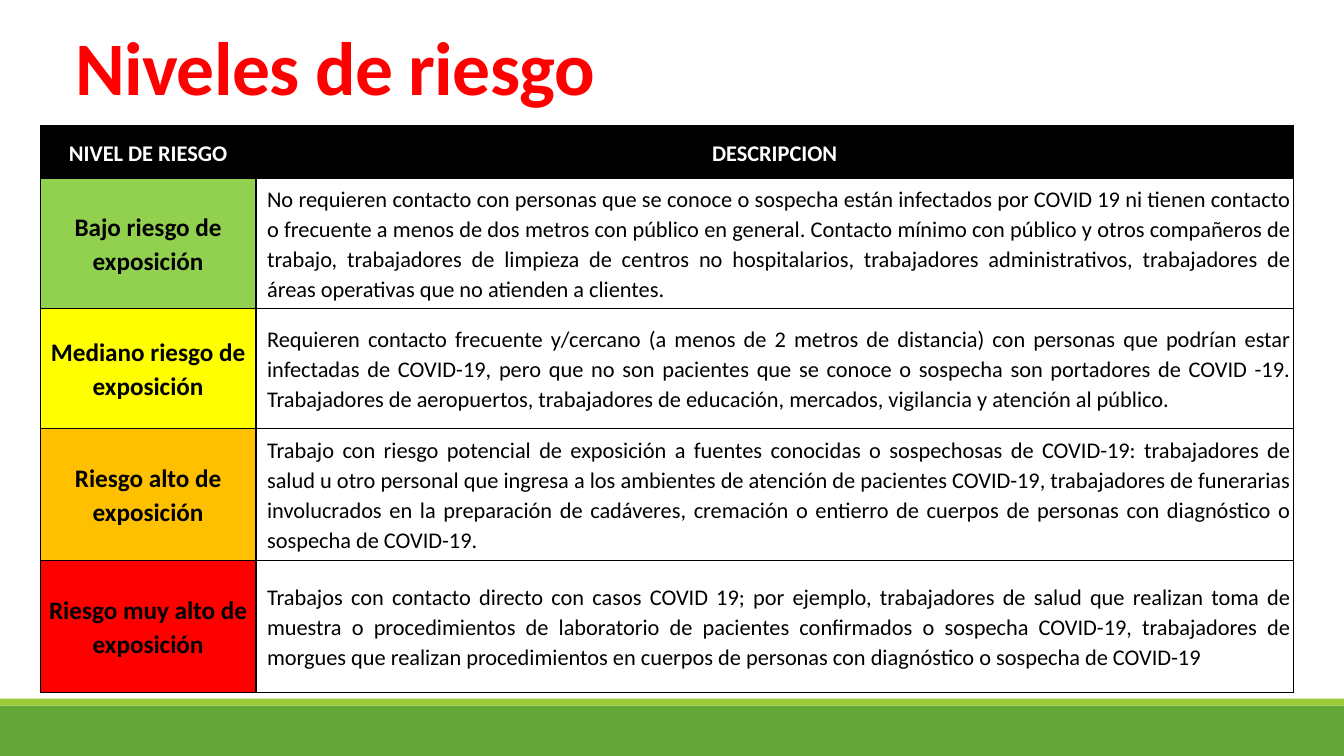
"""Build the slide that describes the levels of exposure risk."""
from dataclasses import dataclass
from typing import Any

import lxml.etree
import pptx
import pptx.dml.color
import pptx.enum.shapes
import pptx.enum.text
import pptx.oxml
import pptx.oxml.ns
import pptx.util

Pt = pptx.util.Pt
RGB = pptx.dml.color.RGBColor.from_string
ALIGN = pptx.enum.text.PP_ALIGN
ANCHOR = pptx.enum.text.MSO_ANCHOR


@dataclass(frozen=True)
class Theme:
    font: str = "Calibri"
    title: str = "FF0000"
    black: str = "000000"
    white: str = "FFFFFF"
    band: str = "63A537"
    stripe: str = "99CB38"
    title_size: float = 54
    level_size: float = 18
    body_size: float = 16


@dataclass(frozen=True)
class Band:
    top: float
    height: float
    color: str


@dataclass(frozen=True)
class Risk:
    level: str
    color: str
    height: float
    description: str


@dataclass(frozen=True)
class CellStyle:
    fill: str
    color: str
    size: float
    bold: bool = True
    align: Any = ALIGN.CENTER
    indent: float = 0


THEME = Theme()
WIDTH, HEIGHT = 960, 540
BANDS = [Band(504, 36, THEME.band), Band(499, 5, THEME.stripe)]
TABLE_LEFT, TABLE_TOP = 28.8, 90
COLUMNS = [154.08, 740.88]
HEADINGS = ["NIVEL DE RIESGO", "DESCRIPCION"]
HEADER_HEIGHT = 37.44
RISKS = [
    Risk("Bajo riesgo de exposición", "92D050", 92.88,
         "No requieren contacto con personas que se conoce o sospecha están infectados por "
         "COVID 19 ni tienen contacto o frecuente a menos de dos metros con público en general. "
         "Contacto mínimo con público y otros compañeros de trabajo, trabajadores de limpieza "
         "de centros no hospitalarios, trabajadores administrativos, trabajadores de áreas "
         "operativas que no atienden a clientes."),
    Risk("Mediano riesgo de exposición", "FFFF00", 85.68,
         "Requieren contacto frecuente y/cercano (a menos de 2 metros de distancia) con personas "
         "que podrían estar infectadas de COVID-19, pero que no son pacientes que se conoce o "
         "sospecha son portadores de COVID -19. Trabajadores de aeropuertos, trabajadores de "
         "educación, mercados, vigilancia y atención al público."),
    Risk("Riesgo alto de exposición", "FFC000", 94.32,
         "Trabajo con riesgo potencial de exposición a fuentes conocidas o sospechosas de "
         "COVID-19: trabajadores de salud u otro personal que ingresa a los ambientes de "
         "atención de pacientes COVID-19, trabajadores de funerarias involucrados en la "
         "preparación de cadáveres, cremación o entierro de cuerpos de personas con diagnóstico "
         "o sospecha de COVID-19."),
    Risk("Riesgo muy alto de exposición", "FF0000", 94.32,
         "Trabajos con contacto directo con casos COVID 19; por ejemplo, trabajadores de salud "
         "que realizan toma de muestra o procedimientos de laboratorio de pacientes confirmados "
         "o sospecha COVID-19, trabajadores de morgues que realizan procedimientos en cuerpos de "
         "personas con diagnóstico o sospecha de COVID-19"),
]


def apply(target: Any, values: dict[str, Any]) -> None:
    for name, value in values.items():
        setattr(target, name, value)


def write(p: Any, text: str, size: float, color: str, bold: bool) -> Any:
    r = p.add_run()
    r.text = text
    apply(r.font, {"name": THEME.font, "size": Pt(size), "bold": bold})
    r.font.color.rgb = RGB(color)
    return r


def add_band(slide: Any, band: Band) -> None:
    sp = slide.shapes.add_shape(pptx.enum.shapes.MSO_SHAPE.RECTANGLE,
                                Pt(0), Pt(band.top), Pt(WIDTH), Pt(band.height))
    sp.shadow.inherit = False
    sp.fill.solid()
    sp.fill.fore_color.rgb = RGB(band.color)
    sp.line.fill.background()


def format_title(sp: Any, text: str) -> None:
    apply(sp, {"left": Pt(46.8), "top": Pt(25.92), "width": Pt(709.92), "height": Pt(56.88)})
    tf = sp.text_frame
    apply(tf, {"word_wrap": True, "vertical_anchor": ANCHOR.BOTTOM,
               "auto_size": pptx.enum.text.MSO_AUTO_SIZE.NONE})
    p = tf.paragraphs[0]
    apply(p, {"alignment": ALIGN.LEFT, "line_spacing": 0.85})
    r = write(p, text, THEME.title_size, THEME.title, True)
    r.font._element.set("spc", "-50")


def add_borders(cell: Any) -> None:
    tc_pr = cell._tc.get_or_add_tcPr()
    for side in ("lnL", "lnR", "lnT", "lnB"):
        ln = lxml.etree.SubElement(tc_pr, pptx.oxml.ns.qn(f"a:{side}"), w=str(Pt(1)))
        fill = lxml.etree.SubElement(ln, pptx.oxml.ns.qn("a:solidFill"))
        lxml.etree.SubElement(fill, pptx.oxml.ns.qn("a:srgbClr"), val=THEME.black)


def fill_cell(cell: Any, text: str, style: CellStyle) -> None:
    apply(cell, {"margin_left": Pt(1.44), "margin_right": Pt(1.44), "margin_top": Pt(0),
                 "margin_bottom": Pt(0), "vertical_anchor": ANCHOR.MIDDLE})
    add_borders(cell)
    cell.fill.solid()
    cell.fill.fore_color.rgb = RGB(style.fill)
    p = cell.text_frame.paragraphs[0]
    apply(p, {"alignment": style.align, "line_spacing": 1.1})
    p._p.get_or_add_pPr().set("marL", str(Pt(style.indent)))
    write(p, text, style.size, style.color, style.bold)


def add_risk_table(slide: Any) -> None:
    heights = [HEADER_HEIGHT] + [risk.height for risk in RISKS]
    table = slide.shapes.add_table(len(heights), len(COLUMNS), Pt(TABLE_LEFT), Pt(TABLE_TOP),
                                   Pt(sum(COLUMNS)), Pt(sum(heights))).table
    apply(table, {"first_row": False, "horz_banding": False})
    for column, width in zip(table.columns, COLUMNS):
        column.width = Pt(width)
    for row, height in zip(table.rows, heights):
        row.height = Pt(height)
    header = CellStyle(THEME.black, THEME.white, THEME.body_size)
    body = CellStyle(THEME.white, THEME.black, THEME.body_size, False, ALIGN.JUSTIFY, 6.48)
    for i, heading in enumerate(HEADINGS):
        fill_cell(table.cell(0, i), heading, header)
    for i, risk in enumerate(RISKS, 1):
        fill_cell(table.cell(i, 0), risk.level,
                  CellStyle(risk.color, THEME.black, THEME.level_size))
        fill_cell(table.cell(i, 1), risk.description, body)


def main() -> None:
    prs = pptx.Presentation()
    apply(prs, {"slide_width": Pt(WIDTH), "slide_height": Pt(HEIGHT)})
    slide = prs.slides.add_slide(prs.slide_layouts.get_by_name("Title Only"))
    for band in BANDS:
        add_band(slide, band)
    format_title(slide.shapes.title, "Niveles de riesgo")
    add_risk_table(slide)
    prs.save("out.pptx")


if __name__ == "__main__":
    main()
